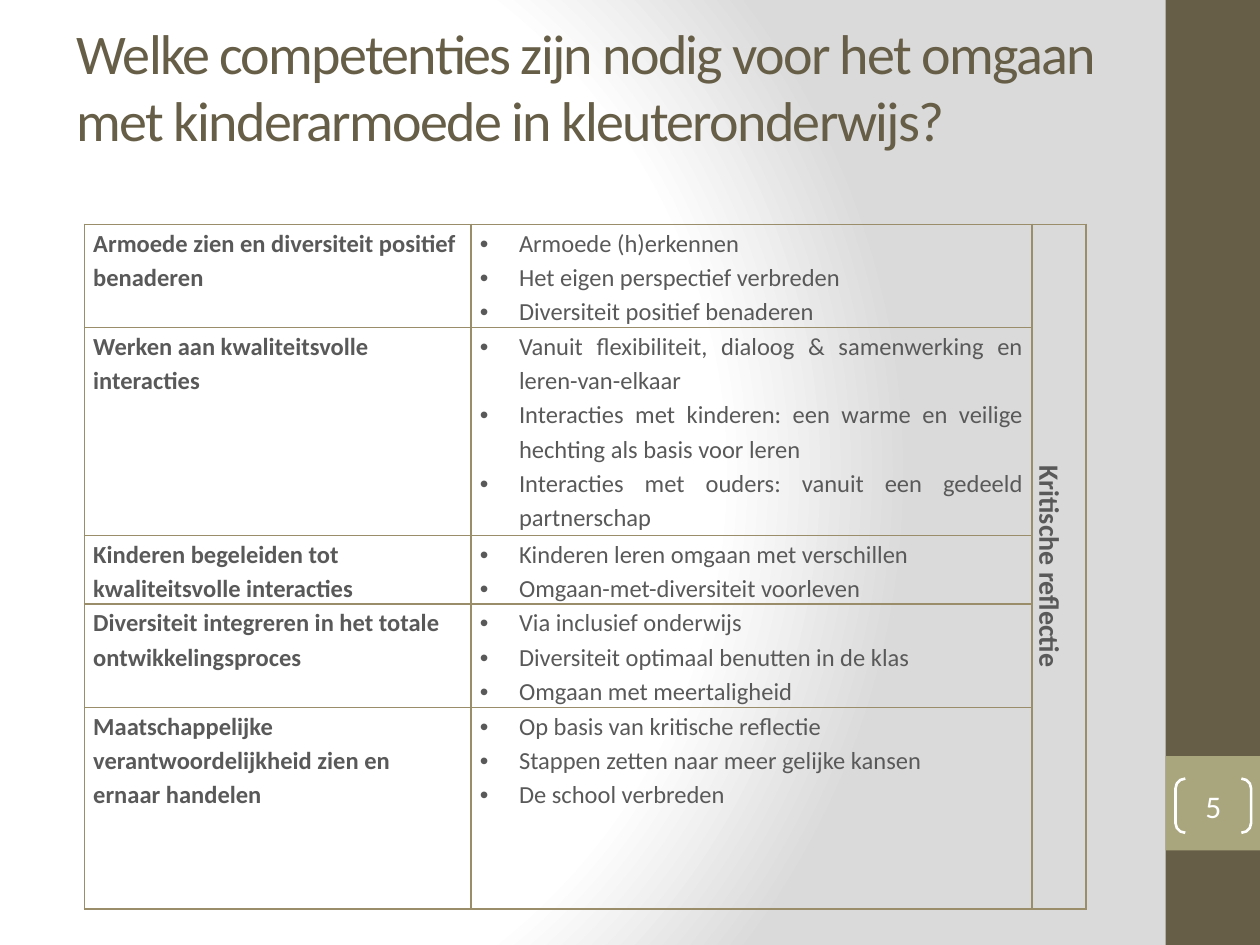
import pptx
import pptx.util
import pptx.dml.color
import pptx.enum.shapes
import pptx.enum.text
import pptx.oxml
import pptx.oxml.ns
from lxml import etree

Inches = pptx.util.Inches
Pt = pptx.util.Pt
qn = pptx.oxml.ns.qn
Align = pptx.enum.text.PP_ALIGN
Anchor = pptx.enum.text.MSO_ANCHOR
Shape = pptx.enum.shapes.MSO_SHAPE

TITLE = "Welke competenties zijn nodig voor het omgaan met kinderarmoede in kleuteronderwijs?"
COMPETENCES = [
    ("Armoede zien en diversiteit positief benaderen",
     ["Armoede (h)erkennen", "Het eigen perspectief verbreden",
      "Diversiteit positief benaderen"]),
    ("Werken aan kwaliteitsvolle interacties",
     ["Vanuit flexibiliteit, dialoog & samenwerking en leren-van-elkaar",
      "Interacties met kinderen: een warme en veilige hechting als basis voor leren",
      "Interacties met ouders: vanuit een gedeeld partnerschap"]),
    ("Kinderen begeleiden tot kwaliteitsvolle interacties",
     ["Kinderen leren omgaan met verschillen", "Omgaan-met-diversiteit voorleven"]),
    ("Diversiteit integreren in het totale ontwikkelingsproces",
     ["Via inclusief onderwijs", "Diversiteit optimaal benutten in de klas",
      "Omgaan met meertaligheid"]),
    ("Maatschappelijke verantwoordelijkheid zien en ernaar handelen",
     ["Op basis van kritische reflectie", "Stappen zetten naar meer gelijke kansen",
      "De school verbreden"]),
]
COLUMN_WIDTHS = [3.07, 4.45, 0.43]
ROW_HEIGHTS = [0.82, 1.65, 0.54, 0.82, 1.59]


def color(code):
    return pptx.dml.color.RGBColor.from_string(code)


def write(paragraph, text, size=14, fill="595959", bold=False, align=Align.LEFT,
          line_spacing=None, spacing=None, bullet=False):
    paragraph.alignment = align
    if line_spacing:
        paragraph.line_spacing = line_spacing
    if bullet:
        properties = paragraph._p.get_or_add_pPr()
        properties.set("marL", str(Inches(0.31)))
        properties.set("indent", str(Inches(-0.31)))
        etree.SubElement(properties, qn("a:buFont")).set("typeface", "Arial")
        etree.SubElement(properties, qn("a:buChar")).set("char", "•")
    span = paragraph.add_run()
    span.text = text
    span.font.name = "Calibri"
    span.font.size = Pt(size)
    span.font.bold = bold
    span.font.color.rgb = color(fill)
    if spacing is not None:
        span.font._element.set("spc", str(spacing * 100))


class SlideBuilder:
    brown = "675E47"
    olive = "A9A57C"
    border = "9A8D6A"

    def __init__(self, deck):
        self.slide = deck.slides.add_slide(deck.slide_layouts[5])

    def background(self, stops, focus):
        fill = self.slide.background.fill
        fill.gradient()
        gradient = next(self.slide.element.iter(qn("a:gradFill")))
        for child in list(gradient):
            gradient.remove(child)
        stop_list = etree.SubElement(gradient, qn("a:gsLst"))
        for position, code in stops:
            stop = etree.SubElement(stop_list, qn("a:gs"), pos=str(position * 1000))
            etree.SubElement(stop, qn("a:srgbClr"), val=code)
        shade = etree.SubElement(gradient, qn("a:path"))
        shade.set("path", "circle")
        target = etree.SubElement(shade, qn("a:fillToRect"))
        for side, percent in zip("ltrb", focus):
            target.set(side, str(percent * 1000))

    def title(self, text, left, top, width, height):
        box = self.slide.shapes.title
        box.left, box.top = Inches(left), Inches(top)
        box.width, box.height = Inches(width), Inches(height)
        frame = box.text_frame
        frame.word_wrap = True
        frame.auto_size = pptx.enum.text.MSO_AUTO_SIZE.NONE
        frame.vertical_anchor = Anchor.MIDDLE
        write(frame.paragraphs[0], text, size=32, fill=self.brown, spacing=-1)

    def shape(self, kind, left, top, width, height, fill=None, line=None):
        box = self.slide.shapes.add_shape(
            kind, Inches(left), Inches(top), Inches(width), Inches(height))
        box.shadow.inherit = False
        if fill:
            box.fill.solid()
            box.fill.fore_color.rgb = color(fill)
        else:
            box.fill.background()
        if line:
            box.line.color.rgb = color(line)
            box.line.width = Pt(1.5)
        else:
            box.line.fill.background()
        return box

    def page_number(self, text, left, top, width, height):
        box = self.shape(Shape.DOUBLE_BRACKET, left, top, width, height, line="FFFFFF")
        box.adjustments[0] = 0.18
        frame = box.text_frame
        frame.margin_left = frame.margin_right = 0
        frame.margin_top = frame.margin_bottom = 0
        frame.vertical_anchor = Anchor.MIDDLE
        write(frame.paragraphs[0], text, size=18, fill="FFFFFF", align=Align.CENTER)

    def style_cell(self, cell):
        cell.margin_left = cell.margin_right = Inches(0.07)
        cell.margin_top = cell.margin_bottom = 0
        properties = cell._tc.get_or_add_tcPr()
        for side in ("lnL", "lnR", "lnT", "lnB"):
            line = etree.SubElement(properties, qn("a:" + side), w=str(Pt(1)))
            solid = etree.SubElement(line, qn("a:solidFill"))
            etree.SubElement(solid, qn("a:srgbClr"), val=self.border)
        cell.fill.background()

    def table(self, rows, side_label, left, top):
        table = self.slide.shapes.add_table(
            len(rows), len(COLUMN_WIDTHS), Inches(left), Inches(top),
            Inches(sum(COLUMN_WIDTHS)), Inches(sum(ROW_HEIGHTS))).table
        table.first_row = table.horz_banding = False
        for column, width in zip(table.columns, COLUMN_WIDTHS):
            column.width = Inches(width)
        for row, height in zip(table.rows, ROW_HEIGHTS):
            row.height = Inches(height)
        for cell in table.iter_cells():
            self.style_cell(cell)
        for index, (competence, points) in enumerate(rows):
            write(table.cell(index, 0).text_frame.paragraphs[0], competence,
                  bold=True, line_spacing=1.15)
            frame = table.cell(index, 1).text_frame
            for number, point in enumerate(points):
                para = frame.add_paragraph() if number else frame.paragraphs[0]
                write(para, point, align=Align.JUSTIFY, line_spacing=1.15, bullet=True)
        label = table.cell(0, 2)
        label.merge(table.cell(len(rows) - 1, 2))
        label.vertical_anchor = Anchor.MIDDLE
        label._tc.get_or_add_tcPr().set("vert", "vert")
        write(label.text_frame.paragraphs[0], side_label, size=16, bold=True,
              align=Align.CENTER, line_spacing=1.15)


def main():
    deck = pptx.Presentation()
    deck.slide_width, deck.slide_height = Inches(10), Inches(7.5)
    builder = SlideBuilder(deck)
    builder.background([(0, "FFFFFF"), (75, "FFFFFF"), (100, "DADADA")], (20, 50, 100, 50))
    builder.shape(Shape.RECTANGLE, 9.25, 0, 0.75, 7.5, fill=builder.brown)
    builder.shape(Shape.RECTANGLE, 9.25, 6, 0.75, 0.75, fill=builder.olive)
    builder.title(TITLE, 0.51, 0.13, 8.33, 1.1)
    builder.table(COMPETENCES, "Kritische reflectie", 0.67, 1.78)
    builder.page_number("5", 9.33, 6.18, 0.6, 0.43)
    deck.save("out.pptx")


if __name__ == "__main__":
    main()
